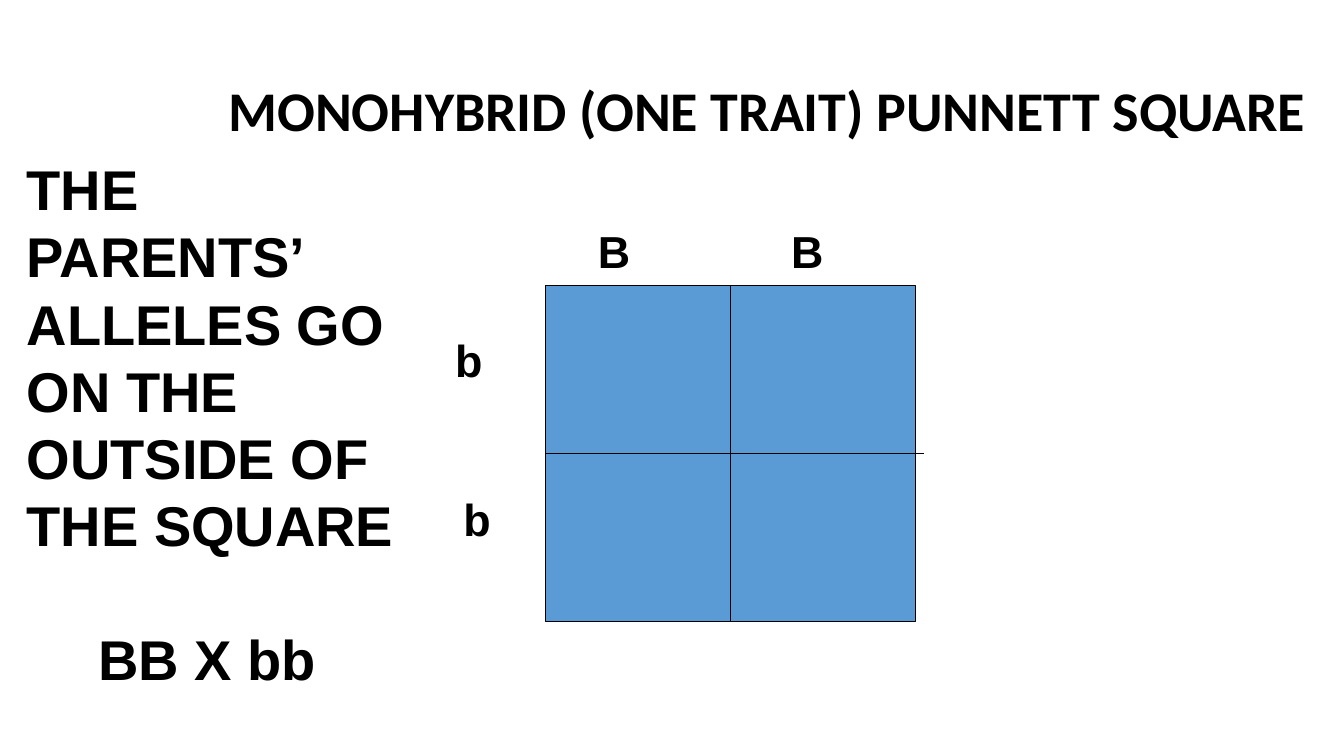
from lxml import etree
from pptx import Presentation
from pptx.dml.color import RGBColor
from pptx.enum.shapes import MSO_CONNECTOR, MSO_SHAPE
from pptx.enum.text import MSO_ANCHOR, PP_ALIGN
from pptx.oxml.ns import qn
from pptx.util import Pt

BLACK = RGBColor(0x00, 0x00, 0x00)
BLUE = RGBColor(0x5B, 0x9B, 0xD5)
RECT = MSO_SHAPE.RECTANGLE
STRAIGHT = MSO_CONNECTOR.STRAIGHT
MIDDLE = MSO_ANCHOR.MIDDLE
LEFT = PP_ALIGN.LEFT
TITLE_ONLY = 5


def write(tf, text, size=40, font="Arial", color=BLACK, bold=True, spacing=None):
    tf.word_wrap = True
    p = tf.paragraphs[0]
    p.alignment = LEFT
    p.line_spacing = spacing or Pt(size * 1.2)
    r = p.add_run()
    r.text = text
    r.font.name = font
    r.font.size = Pt(size)
    r.font.bold = bold
    r.font.color.rgb = color


def add_text(s, box, text, **fmt):
    sp = s.shapes.add_textbox(*map(Pt, box))
    write(sp.text_frame, text, **fmt)


def add_line(s, x1, y1, x2, y2):
    line = s.shapes.add_connector(STRAIGHT, Pt(x1), Pt(y1), Pt(x2), Pt(y2))
    line.line.color.rgb = BLACK
    line.line.width = Pt(0.75)
    etree.SubElement(line._element.spPr, qn("a:effectLst"))


def add_title(s, box):
    sp = s.shapes.title
    sp.left, sp.top, sp.width, sp.height = map(Pt, box)
    sp.text_frame.vertical_anchor = MIDDLE
    write(sp.text_frame, "MONOHYBRID (ONE TRAIT) PUNNETT SQUARE",
          font="Calibri", spacing=0.9)


def add_punnett_square(s, box):
    x, y, w, h = box
    sp = s.shapes.add_shape(RECT, *map(Pt, box))
    sp.shadow.inherit = False
    sp.fill.solid()
    sp.fill.fore_color.rgb = BLUE
    sp.line.color.rgb = BLACK
    sp.line.width = Pt(0.75)

    add_line(s, x + w / 2, y, x + w / 2, y + h)
    add_line(s, x, y + h / 2, x + w + 6, y + h / 2)
    add_line(s, x + w, y + h - 18, x + w, y + 18)

    alleles = [("B", 30, -48, 66), ("B", 168, -48, 48),
               ("b", -72, 30, 54), ("b", -66, 144, 30)]
    for allele, dx, dy, width in alleles:
        add_text(s, (x + dx, y + dy, width, 45), allele, size=32)


def add_explanation(s, box):
    x, y, w, h = box
    add_text(s, (x, y, w, 298),
             "THE PARENTS’ ALLELES GO ON THE OUTSIDE OF THE SQUARE")
    add_text(s, (x + 51, y + h - 55.5, w - 51, 55.5), "BB X bb")


def main():
    prs = Presentation()
    prs.slide_width, prs.slide_height = Pt(960), Pt(540)
    s = prs.slides.add_slide(prs.slide_layouts[TITLE_ONLY])
    add_title(s, (156, 29, 788, 104))
    add_punnett_square(s, (390, 204, 264, 240))
    add_explanation(s, (12, 107, 281.5, 391))
    prs.save("out.pptx")


if __name__ == "__main__":
    main()
